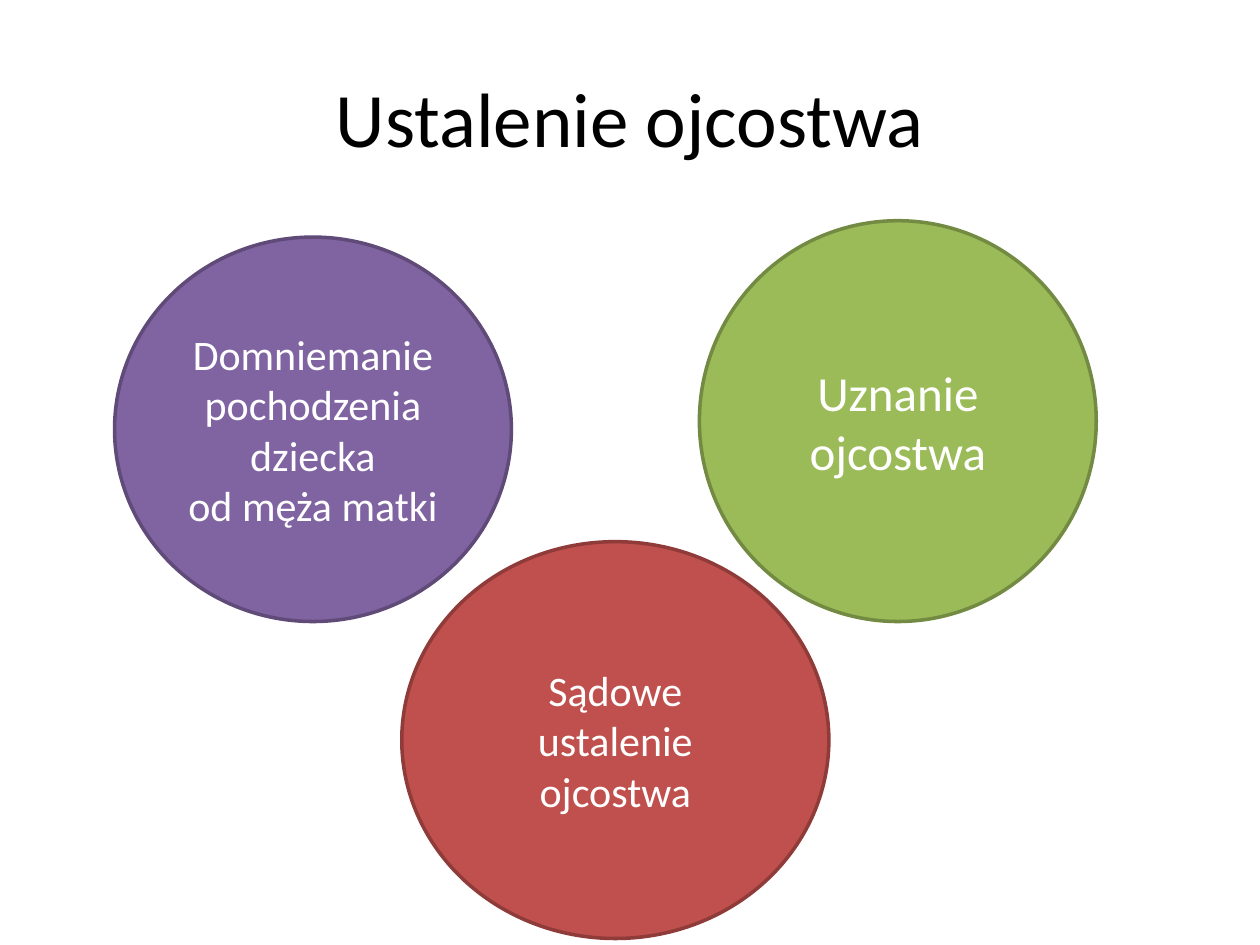
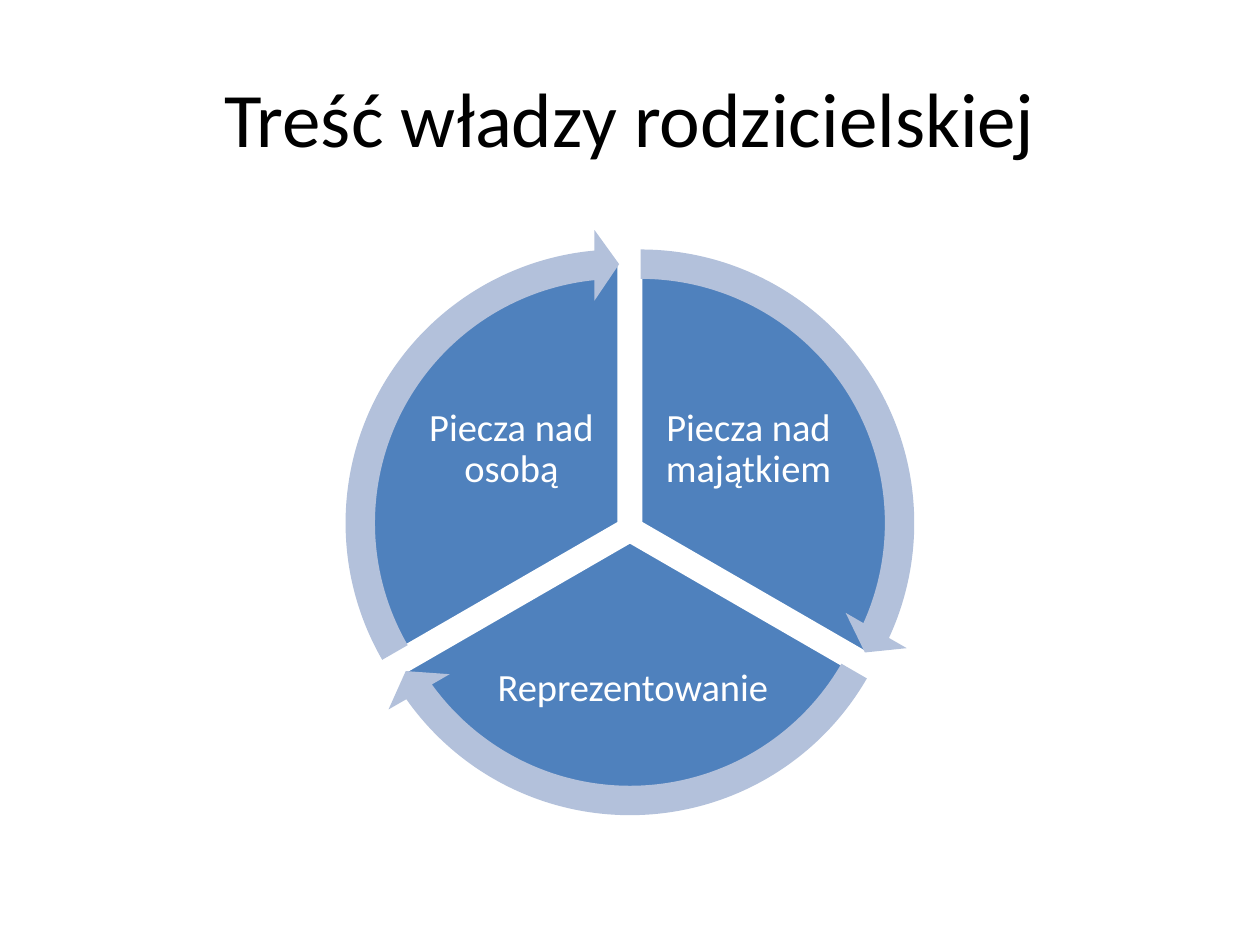
from math import cos, radians, sin

from pptx import Presentation
from pptx.dml.color import RGBColor
from pptx.enum.shapes import MSO_SHAPE
from pptx.enum.text import MSO_ANCHOR, PP_ALIGN
from pptx.util import Cm, Pt

BLACK = RGBColor(0x00, 0x00, 0x00)
WHITE = RGBColor(0xFF, 0xFF, 0xFF)
GREEN = RGBColor(0x9B, 0xBB, 0x59)
DARK_GREEN = RGBColor(0x73, 0x8A, 0x42)
PURPLE = RGBColor(0x80, 0x64, 0xA2)
DARK_PURPLE = RGBColor(0x5F, 0x4A, 0x78)
RED = RGBColor(0xC0, 0x50, 0x4D)
DARK_RED = RGBColor(0x8E, 0x3B, 0x39)
BLUE = RGBColor(0x4F, 0x81, 0xBD)
PALE_BLUE = RGBColor(0xB3, 0xC1, 0xDB)
FONT = "Calibri"

PATERNITY_TITLE = "Ustalenie ojcostwa"
PATERNITY_WAYS = [
    (["Uznanie ojcostwa"], 28, (14.1, 4.45, 8, 8.08), GREEN, DARK_GREEN),
    (["Domniemanie pochodzenia dziecka", "od męża matki"], 24,
     (2.31, 4.78, 8, 7.75), PURPLE, DARK_PURPLE),
    (["Sądowe ustalenie ojcostwa"], 24, (8.1, 10.92, 8.61, 8), RED, DARK_RED),
]

AUTHORITY_TITLE = "Treść władzy rodzicielskiej"
AUTHORITY_PARTS = [
    ("Piecza nad majątkiem", (13.21, 7.49, 3.76, 3.15)),
    ("Reprezentowanie", (9.93, 12.5, 5.66, 2.77)),
    ("Piecza nad osobą", (8.43, 7.49, 3.76, 3.15)),
]

TITLE_BOX = (1.27, 0.76, 22.86, 3.18)
WHEEL_CENTRE = (12.7, 10.67)
WHEEL_OFFSET = 0.25
SLICE_SIZE = 10.57
ARROW_SIZE = 11.86
ARROW_HEAD = 3.28
FULL_TURN = 216
FIRST_START = 162


def write_text(shape, paragraphs, size, color=WHITE, inset=None, line_spacing=None):
    frame = shape.text_frame
    frame.word_wrap = True
    frame.vertical_anchor = MSO_ANCHOR.MIDDLE
    if inset is not None:
        frame.margin_left = frame.margin_right = Cm(inset)
        frame.margin_top = frame.margin_bottom = Cm(inset)
    for index, text in enumerate(paragraphs):
        paragraph = frame.add_paragraph() if index else frame.paragraphs[0]
        paragraph.text = text
        paragraph.alignment = PP_ALIGN.CENTER
        paragraph.line_spacing = line_spacing
        paragraph.font.name = FONT
        paragraph.font.size = Pt(size)
        paragraph.font.color.rgb = color


def add_text(slide, text, box, size, **text_format):
    shape = slide.shapes.add_textbox(*map(Cm, box))
    write_text(shape, [text], size, **text_format)


def add_filled(slide, kind, box, fill, line=None, adjustments=()):
    shape = slide.shapes.add_shape(kind, *map(Cm, box))
    shape.shadow.inherit = False
    shape.fill.solid()
    shape.fill.fore_color.rgb = fill
    if line is None:
        shape.line.fill.background()
    else:
        shape.line.color.rgb = line
        shape.line.width = Pt(2)
    for index, value in enumerate(adjustments):
        shape.adjustments[index] = value
    return shape


def add_titled_slide(presentation, title):
    slide = presentation.slides.add_slide(presentation.slide_layouts[6])
    add_text(slide, title, TITLE_BOX, 44, color=BLACK)
    return slide


def add_paternity_slide(presentation):
    slide = add_titled_slide(presentation, PATERNITY_TITLE)
    for paragraphs, size, box, fill, line in PATERNITY_WAYS:
        circle = add_filled(slide, MSO_SHAPE.OVAL, box, fill, line)
        write_text(circle, paragraphs, size)


def add_authority_slide(presentation):
    slide = add_titled_slide(presentation, AUTHORITY_TITLE)
    sweep = FULL_TURN / len(AUTHORITY_PARTS)
    sectors = []
    for index, (label, label_box) in enumerate(AUTHORITY_PARTS):
        start = (FIRST_START + index * sweep) % FULL_TURN
        end = (start + sweep) % FULL_TURN
        middle = radians((start + sweep / 2) * 360 / FULL_TURN)
        x = WHEEL_CENTRE[0] + WHEEL_OFFSET * cos(middle)
        y = WHEEL_CENTRE[1] + WHEEL_OFFSET * sin(middle)
        sectors.append((x, y, start, end))
        add_filled(slide, MSO_SHAPE.PIE, square_around(x, y, SLICE_SIZE),
                   BLUE, WHITE, (start, end))
        add_text(slide, label, label_box, 22, inset=0.08, line_spacing=0.9)
    for x, y, start, end in sectors:
        add_filled(slide, MSO_SHAPE.CIRCULAR_ARROW, square_around(x, y, ARROW_SIZE),
                   PALE_BLUE,
                   adjustments=(0.05, ARROW_HEAD, end - ARROW_HEAD, start, 0.06))


def square_around(x, y, size):
    return x - size / 2, y - size / 2, size, size


def main():
    presentation = Presentation()
    presentation.slide_width = Cm(25.4)
    presentation.slide_height = Cm(19.05)
    add_paternity_slide(presentation)
    add_authority_slide(presentation)
    presentation.save("out.pptx")


if __name__ == "__main__":
    main()
